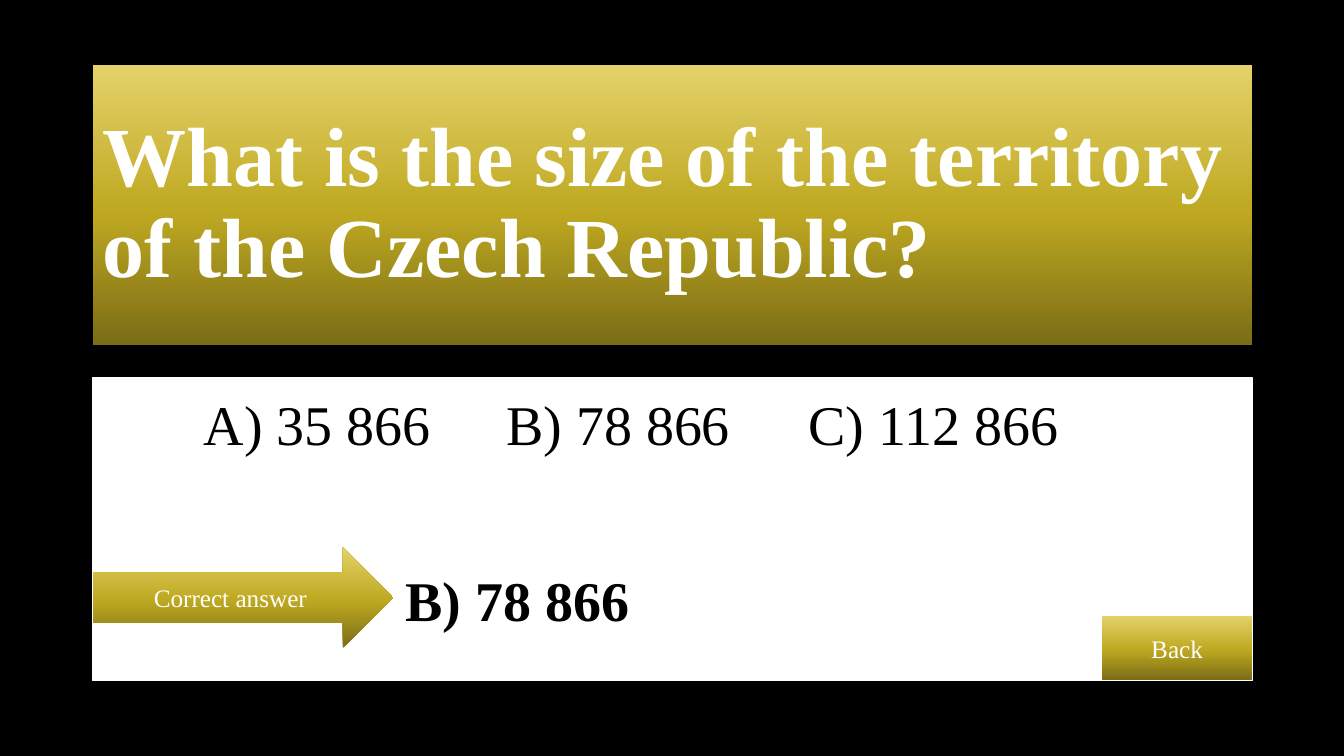
import copy

import pptx
import pptx.dml.color
import pptx.enum.shapes
import pptx.enum.text
import pptx.oxml
import pptx.oxml.ns
import pptx.util
from pptx.util import Inches

BLACK = pptx.dml.color.RGBColor(0x00, 0x00, 0x00)
WHITE = pptx.dml.color.RGBColor(0xFF, 0xFF, 0xFF)
GOLD_STOPS = (
    (0, pptx.dml.color.RGBColor(0x7B, 0x6D, 0x16)),
    (0.48, pptx.dml.color.RGBColor(0xBF, 0xA9, 0x22)),
    (1, pptx.dml.color.RGBColor(0xE4, 0xD2, 0x6A)),
)
FONT = "Times New Roman"
LEFT, WIDTH = 0.92, 11.5
ALIGN = pptx.enum.text.PP_ALIGN
ANCHOR = pptx.enum.text.MSO_ANCHOR
SHAPE = pptx.enum.shapes.MSO_SHAPE


def place(shape, left, top, width, height):
    shape.left, shape.top = Inches(left), Inches(top)
    shape.width, shape.height = Inches(width), Inches(height)


def fill_gold(shape):
    """Fill with gold that runs from dark at the bottom to light at the top."""
    shape.fill.gradient()
    shape.fill.gradient_angle = 90
    first = shape._element.spPr.find(".//" + pptx.oxml.ns.qn("a:gs"))
    first.addnext(copy.deepcopy(first))
    for stop, (position, color) in zip(shape.fill.gradient_stops, GOLD_STOPS):
        stop.position = position
        stop.color.rgb = color
    shape.line.fill.background()


def write(para, text, size, color=WHITE, bold=False, align=ALIGN.LEFT,
          line_spacing=None, space_before=0):
    para.alignment = align
    para.line_spacing = line_spacing
    para.space_before = pptx.util.Pt(space_before)
    span = para.add_run()
    span.text = text
    span.font.name = FONT
    span.font.size = pptx.util.Pt(size)
    span.font.bold = bold
    span.font.color.rgb = color


def set_indent(para, indent):
    """Remove the bullet, indent the whole paragraph, set tabs an inch apart."""
    properties = para._p.get_or_add_pPr()
    properties.set("marL", str(Inches(indent)))
    properties.set("indent", "0")
    properties.set("defTabSz", str(Inches(1)))
    namespace = pptx.oxml.ns.nsdecls("a")
    properties.append(pptx.oxml.parse_xml(f"<a:buNone {namespace}/>"))


def prepare_frame(shape, anchor):
    frame = shape.text_frame
    frame.word_wrap = True
    frame.auto_size = pptx.enum.text.MSO_AUTO_SIZE.NONE
    frame.vertical_anchor = anchor
    return frame


def add_question(page, text):
    title = page.shapes.title
    place(title, LEFT, 0.64, WIDTH, 2.78)
    fill_gold(title)
    frame = prepare_frame(title, ANCHOR.MIDDLE)
    write(frame.paragraphs[0], text, 60, bold=True, line_spacing=0.9)


def add_answers(page, choices, correct):
    body = page.placeholders[1]
    place(body, LEFT, 3.75, WIDTH, 3)
    body.fill.solid()
    body.fill.fore_color.rgb = WHITE
    body.line.color.rgb = WHITE
    body.line.width = pptx.util.Pt(1)
    frame = prepare_frame(body, ANCHOR.TOP)
    para = frame.paragraphs[0]
    write(para, "".join("\t" + choice for choice in choices), 40, BLACK,
          line_spacing=1.1, space_before=10)
    set_indent(para, 0)
    para = frame.add_paragraph()
    write(para, correct, 40, BLACK, bold=True, line_spacing=1.1, space_before=73)
    set_indent(para, 3)


def add_gold_label(page, kind, text, left, top, width, height):
    label = page.shapes.add_shape(
        kind, Inches(left), Inches(top), Inches(width), Inches(height))
    label.shadow.inherit = False
    fill_gold(label)
    frame = prepare_frame(label, ANCHOR.MIDDLE)
    write(frame.paragraphs[0], text, 18, align=ALIGN.CENTER)


def main():
    deck = pptx.Presentation()
    deck.slide_width, deck.slide_height = Inches(13.33), Inches(7.5)
    page = deck.slides.add_slide(deck.slide_layouts[1])
    page.background.fill.solid()
    page.background.fill.fore_color.rgb = BLACK

    choices = ["A) 35 866", "B) 78 866", "C) 112 866"]
    add_question(page, "What is the size of the territory of the Czech Republic?")
    add_answers(page, choices, correct=choices[1])
    add_gold_label(page, SHAPE.RECTANGLE, "Back", 10.93, 6.11, 1.49, 0.64)
    add_gold_label(page, SHAPE.RIGHT_ARROW, "Correct answer", LEFT, 5.43, 2.98, 1)
    deck.save("out.pptx")


if __name__ == "__main__":
    main()
